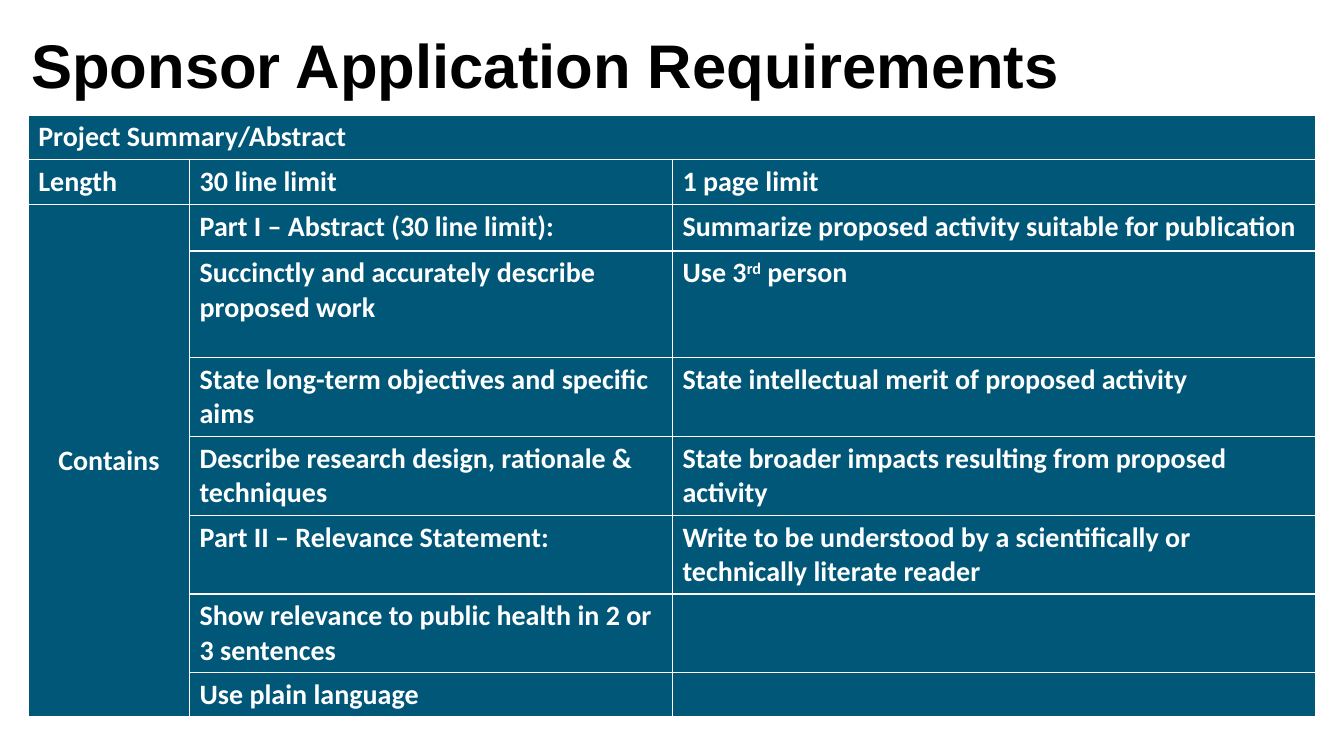
from lxml.etree import SubElement
from pptx import Presentation
from pptx.dml.color import RGBColor
from pptx.enum.text import MSO_ANCHOR, PP_ALIGN
from pptx.oxml.ns import qn
from pptx.util import Inches, Pt

WIDTH, HEIGHT = 13.33, 7.5
TEAL, WHITE, BLACK = "005778", "FFFFFF", "000000"
TITLE_FONT = {"name": "Arial", "size": Pt(44), "bold": True}
CELL_FONT = {"name": "Calibri", "size": Pt(20), "bold": True}

# Table grid, in inches
COLUMNS = [1.6, 4.79, 6.38]
ROWS = [0.44, 0.45, 0.46, 1.06] + [0.78] * 4 + [0.44]

# Text between carets is superscript
REQUIREMENTS = [
    ["Project Summary/Abstract", "", ""],
    ["Length", "30 line limit", "1 page limit"],
    ["Contains", "Part I – Abstract (30 line limit):",
     "Summarize proposed activity suitable for publication"],
    ["", "Succinctly and accurately describe proposed work", "Use 3^rd^ person"],
    ["", "State long-term objectives and specific aims",
     "State intellectual merit of proposed activity"],
    ["", "Describe research design, rationale & techniques",
     "State broader impacts resulting from proposed activity"],
    ["", "Part II – Relevance Statement:",
     "Write to be understood by a scientifically or technically literate reader"],
    ["", "Show relevance to public health in 2 or 3 sentences", ""],
    ["", "Use plain language", ""],
]


def color(hex_string):
    return RGBColor.from_string(hex_string)


def add_run(p, text, font, hex_string):
    r = p.add_run()
    r.text = text
    for name, value in font.items():
        setattr(r.font, name, value)
    r.font.color.rgb = color(hex_string)
    return r


def add_title(s, text):
    sp = s.shapes.title
    box = {"left": Inches(0.21), "top": Inches(0.21),
           "width": Inches(10.81), "height": Inches(0.84)}
    for name, value in box.items():
        setattr(sp, name, value)
    tf = sp.text_frame
    tf.word_wrap = True
    tf.vertical_anchor = MSO_ANCHOR.MIDDLE
    p = tf.paragraphs[0]
    p.alignment = PP_ALIGN.LEFT
    add_run(p, text, TITLE_FONT, BLACK)


def add_borders(cell, hex_string, points):
    tc_pr = cell._tc.get_or_add_tcPr()
    for side in ("lnL", "lnR", "lnT", "lnB"):
        ln = SubElement(tc_pr, qn(f"a:{side}"), w=str(Pt(points)))
        fill = SubElement(ln, qn("a:solidFill"))
        SubElement(fill, qn("a:srgbClr"), val=hex_string)


def fill_cell(cell, text):
    add_borders(cell, WHITE, 1)
    cell.fill.solid()
    cell.fill.fore_color.rgb = color(TEAL)
    if not text:
        return
    p = cell.text_frame.paragraphs[0]
    for i, part in enumerate(text.split("^")):
        r = add_run(p, part, CELL_FONT, WHITE)
        if i % 2:
            r.font._element.set("baseline", "30000")


def add_requirements(s):
    table = s.shapes.add_table(
        len(ROWS), len(COLUMNS), Inches(0.28), Inches(1.14),
        Inches(sum(COLUMNS)), Inches(sum(ROWS))).table
    for column, width in zip(table.columns, COLUMNS):
        column.width = Inches(width)
    for row, height, texts in zip(table.rows, ROWS, REQUIREMENTS):
        row.height = Inches(height)
        for cell, text in zip(row.cells, texts):
            fill_cell(cell, text)

    # Heading across the top, "Contains" down the side
    table.cell(0, 0).merge(table.cell(0, 2))
    contains = table.cell(2, 0)
    contains.merge(table.cell(len(ROWS) - 1, 0))
    contains.vertical_anchor = MSO_ANCHOR.MIDDLE
    contains.text_frame.paragraphs[0].alignment = PP_ALIGN.CENTER


def main():
    prs = Presentation()
    prs.slide_width, prs.slide_height = Inches(WIDTH), Inches(HEIGHT)
    s = prs.slides.add_slide(prs.slide_layouts.get_by_name("Title Only"))
    add_requirements(s)
    add_title(s, "Sponsor Application Requirements")
    prs.save("out.pptx")


if __name__ == "__main__":
    main()
